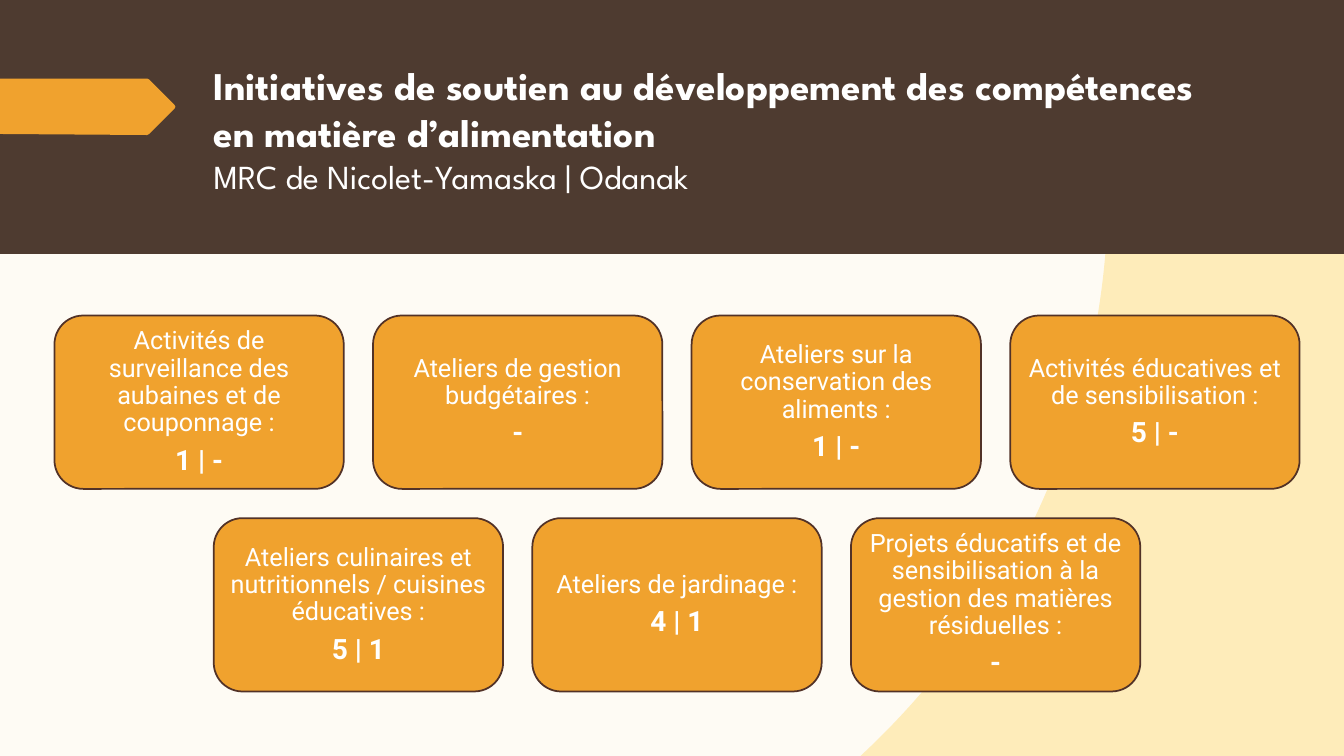
from math import asin, cos, sin

from pptx import Presentation
from pptx.dml.color import RGBColor
from pptx.enum.shapes import MSO_SHAPE
from pptx.enum.text import MSO_ANCHOR, PP_ALIGN
from pptx.util import Inches, Pt

BROWN, ORANGE, OUTLINE = "4E3B30", "F0A22E", "523227"
CREAM, SAND, WHITE = "FEFBF4", "FEECBA", "FFFFFF"


def paint(fill, color):
    fill.solid()
    fill.fore_color.rgb = RGBColor.from_string(color)


def add_span(para, text, font, size, bold):
    span = para.add_run()
    span.text = text
    span.font.name = font
    span.font.size = Pt(size)
    span.font.bold = bold
    span.font.color.rgb = RGBColor.from_string(WHITE)


deck = Presentation()
deck.slide_width, deck.slide_height = Inches(13.33), Inches(7.5)
page = deck.slides.add_slide(deck.slide_layouts[6])
paint(page.background.fill, CREAM)

# Sand corner outside a large circle
center_x, center_y, radius, steps = 3.33, 1.88, 7.66, 60
start, end = asin((2.5 - center_y) / radius), asin((7.5 - center_y) / radius)
angles = [start + (end - start) * i / steps for i in range(steps + 1)]
corner = [(center_x + radius * cos(a), center_y + radius * sin(a)) for a in angles]
corner += [(13.33, 7.5), (13.33, 2.5)]

# Arrow tag at the left edge, with a slightly blunted tip
tag = [(0, 0.78), (1.46, 0.78), (1.48, 0.79), (1.73, 1.04), (1.74, 1.06),
       (1.73, 1.08), (1.48, 1.33), (1.46, 1.34), (0, 1.33)]

# Header band between the two outlines
for points, color in ((corner, SAND), (None, BROWN), (tag, ORANGE)):
    if points:
        (first_x, first_y), *others = points
        builder = page.shapes.build_freeform(Inches(first_x), Inches(first_y))
        builder.add_line_segments([(Inches(x), Inches(y)) for x, y in others])
        shape = builder.convert_to_shape()
    else:
        shape = page.shapes.add_shape(
            MSO_SHAPE.RECTANGLE, 0, 0, Inches(13.33), Inches(2.52))
    paint(shape.fill, color)
    shape.line.fill.background()
    shape.shadow.inherit = False

# Title and subtitle
box = page.shapes.add_textbox(Inches(2.02), Inches(0.56), Inches(10.26), Inches(1.59))
box.text_frame.word_wrap = True
title = box.text_frame.paragraphs[0]
title.line_spacing = Pt(33.6)
add_span(title, "Initiatives de soutien au développement des compétences "
         "en matière d’alimentation", "League Spartan", 28, True)
subtitle = box.text_frame.add_paragraph()
subtitle.line_spacing = Pt(29.3)
add_span(subtitle, "MRC de Nicolet-Yamaska | Odanak", "League Spartan", 24, False)

# Cards: a row of four above a row of three
rows = [
    (0.54, 3.13, [
        ("Activités de surveillance des aubaines et de couponnage :", "1 | -"),
        ("Ateliers de gestion budgétaires :", "-"),
        ("Ateliers sur la conservation des aliments :", "1 | -"),
        ("Activités éducatives et de sensibilisation :", "5 | -"),
    ]),
    (2.12, 5.14, [
        ("Ateliers culinaires et nutritionnels / cuisines éducatives :", "5 | 1"),
        ("Ateliers de jardinage :", "4 | 1"),
        ("Projets éducatifs et de sensibilisation à la gestion "
         "des matières résiduelles :", "-"),
    ]),
]
card_width, card_height, pitch = 2.87, 1.72, 3.16
for left, top, cards in rows:
    for column, (label, count) in enumerate(cards):
        card = page.shapes.add_shape(
            MSO_SHAPE.ROUNDED_RECTANGLE, Inches(left + column * pitch), Inches(top),
            Inches(card_width), Inches(card_height))
        paint(card.fill, ORANGE)
        paint(card.line.fill, OUTLINE)
        card.line.width = Pt(1.25)
        card.shadow.inherit = False
        frame = card.text_frame
        frame.word_wrap = True
        frame.vertical_anchor = MSO_ANCHOR.MIDDLE
        frame.margin_left = frame.margin_right = Inches(0.07)
        frame.margin_top = frame.margin_bottom = Inches(0.07)
        label_para, count_para = frame.paragraphs[0], frame.add_paragraph()
        for para, text, size, bold in ((label_para, label, 18, False),
                                       (count_para, count, 20, True)):
            para.alignment = PP_ALIGN.CENTER
            para.line_spacing = 0.9
            para.space_after = Pt(size * 0.35)
            add_span(para, text, "Roboto", size, bold)

deck.save("out.pptx")
